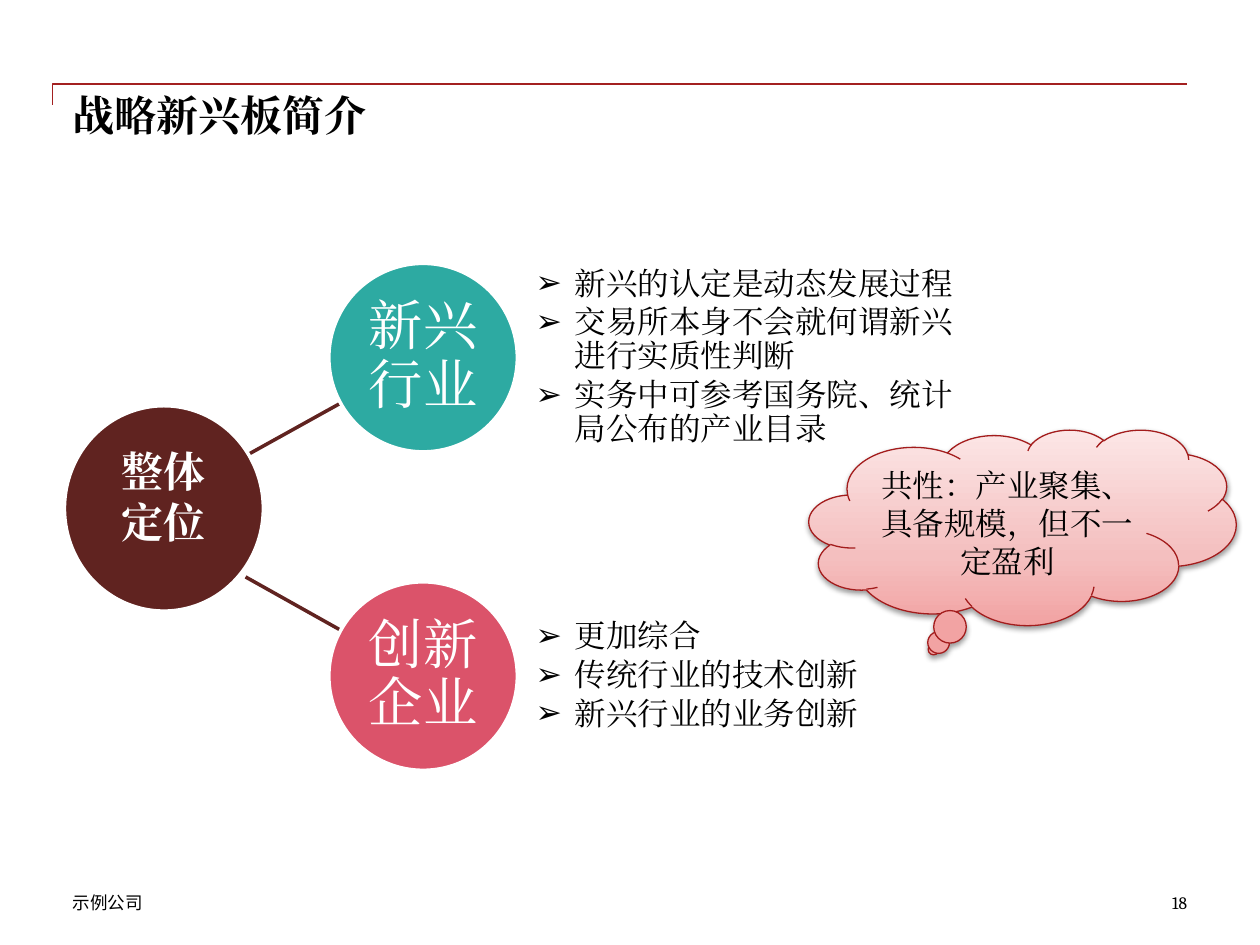
from copy import deepcopy

from lxml.etree import SubElement
from pptx import Presentation
from pptx.dml.color import RGBColor
from pptx.enum.shapes import MSO_CONNECTOR as Connector
from pptx.enum.shapes import MSO_SHAPE as Shape
from pptx.enum.text import MSO_ANCHOR as Anchor
from pptx.enum.text import MSO_AUTO_SIZE as AutoSize
from pptx.enum.text import PP_ALIGN as Align
from pptx.oxml.ns import qn
from pptx.util import Cm, Pt

BLACK = RGBColor(0x00, 0x00, 0x00)
WHITE = RGBColor(0xFF, 0xFF, 0xFF)
RULE_RED = RGBColor(0xA3, 0x20, 0x20)
MAROON = RGBColor(0x60, 0x23, 0x20)
TEAL = RGBColor(0x2D, 0xAA, 0xA2)
ROSE = RGBColor(0xDB, 0x53, 0x6A)
CLOUD_LINE = RGBColor(0xA3, 0x1C, 0x1C)
CLOUD_STOPS = [
    (0, RGBColor(0xF2, 0xA3, 0xA3)),
    (0.35, RGBColor(0xF4, 0xBF, 0xBF)),
    (1, RGBColor(0xFC, 0xE6, 0xE6)),
]
HEADING_FONT = "Cambria"
FOOTER_FONT = "Noto Sans CJK SC"

BRANCHES = [
    ("新兴行业", TEAL, 5.31, [
        "新兴的认定是动态发展过程",
        "交易所本身不会就何谓新兴进行实质性判断",
        "实务中可参考国务院、统计局公布的产业目录",
    ]),
    ("创新企业", ROSE, 11.73, [
        "更加综合",
        "传统行业的技术创新",
        "新兴行业的业务创新",
    ]),
]


def add_text(paragraph, text, size, color=BLACK, bold=False, name=HEADING_FONT):
    run = paragraph.add_run()
    run.text = text
    font = run.font
    font.size = Pt(size)
    font.bold = bold
    font.color.rgb = color
    font.name = name
    SubElement(run.font._element, qn("a:ea"), typeface=name)


def set_frame(shape, anchor, inset=0):
    frame = shape.text_frame
    frame.word_wrap = True
    frame.auto_size = AutoSize.NONE
    frame.vertical_anchor = anchor
    frame.margin_left = frame.margin_right = Cm(inset)
    frame.margin_top = frame.margin_bottom = Cm(inset)
    return frame


def place(shape, left, top, width, height):
    shape.left, shape.top = Cm(left), Cm(top)
    shape.width, shape.height = Cm(width), Cm(height)


def add_header(slide, left, top, width):
    builder = slide.shapes.build_freeform(Cm(left), Cm(top + 0.42))
    builder.add_line_segments(
        [(Cm(left), Cm(top)), (Cm(left + width), Cm(top))], close=False)
    rule = builder.convert_to_shape()
    rule.shadow.inherit = False
    rule.fill.background()
    rule.line.color.rgb = RULE_RED
    rule.line.width = Pt(1)

    title = slide.shapes.title
    place(title, left + 0.41, top + 0.22, width - 0.43, 2.97)
    paragraph = set_frame(title, Anchor.TOP).paragraphs[0]
    paragraph.alignment = Align.LEFT
    paragraph.line_spacing = 0.9
    add_text(paragraph, "战略新兴板简介", 24, bold=True)


def add_link(slide, start_x, start_y, end_x, end_y):
    link = slide.shapes.add_connector(
        Connector.STRAIGHT, Cm(start_x), Cm(start_y), Cm(end_x), Cm(end_y))
    link.line.color.rgb = MAROON
    link.line.width = Pt(2)
    SubElement(link._element.spPr, qn("a:effectLst"))


def add_disc(slide, left, top, width, height, color):
    disc = slide.shapes.add_shape(
        Shape.OVAL, Cm(left), Cm(top), Cm(width), Cm(height))
    disc.shadow.inherit = False
    disc.fill.solid()
    disc.fill.fore_color.rgb = color
    disc.line.color.rgb = WHITE
    disc.line.width = Pt(2)
    return disc


def add_root(slide, left, top, width, height):
    disc = add_disc(slide, left, top, width, height, MAROON)
    paragraph = set_frame(disc, Anchor.TOP, 0.2).paragraphs[0]
    paragraph.alignment = Align.CENTER
    add_text(paragraph, "整体定位", 24, WHITE, bold=True)


def add_bullet(paragraph):
    properties = paragraph._p.get_or_add_pPr()
    properties.set("marL", str(Cm(0.79)))
    properties.set("indent", str(-Cm(0.79)))
    SubElement(properties, qn("a:buFont"), typeface="Arial")
    SubElement(properties, qn("a:buChar"), char="➢")


def add_branch(slide, body, left, top, size, label, color, items):
    disc = add_disc(slide, left, top, size, size, color)
    paragraph = set_frame(disc, Anchor.MIDDLE, 0.05).paragraphs[0]
    paragraph.alignment = Align.CENTER
    paragraph.line_spacing = 0.9
    paragraph.space_after = Pt(10.85)
    add_text(paragraph, label, 31, WHITE)

    place(body, left + size + 0.37, top, 8.71, size)
    frame = set_frame(body, Anchor.MIDDLE)
    for index, item in enumerate(items):
        paragraph = frame.add_paragraph() if index else frame.paragraphs[0]
        add_bullet(paragraph)
        paragraph.line_spacing = 0.9
        paragraph.space_before = Pt(0)
        paragraph.space_after = Pt(2.7)
        add_text(paragraph, item, 18)


def add_cloud(slide, left, top, width, height):
    cloud = slide.shapes.add_shape(
        Shape.CLOUD_CALLOUT, Cm(left), Cm(top), Cm(width), Cm(height))
    cloud.fill.gradient()
    cloud.fill.gradient_angle = 90
    stop_list = cloud._element.spPr.find(".//" + qn("a:gsLst"))
    stop_list.insert(1, deepcopy(stop_list[0]))
    for stop, (position, color) in zip(cloud.fill.gradient_stops, CLOUD_STOPS):
        stop.position = position
        stop.color.rgb = color
    cloud.line.color.rgb = CLOUD_LINE
    cloud.line.width = Pt(0.75)

    cloud.shadow.inherit = False
    effects = cloud._element.spPr.find(qn("a:effectLst"))
    shadow = SubElement(effects, qn("a:outerShdw"), blurRad=str(Pt(3.1)),
                        dist=str(Pt(1.6)), dir="5400000", rotWithShape="0")
    shadow_color = SubElement(shadow, qn("a:srgbClr"), val=str(BLACK))
    SubElement(shadow_color, qn("a:alpha"), val="38000")

    paragraph = set_frame(cloud, Anchor.MIDDLE, 0.2).paragraphs[0]
    paragraph.alignment = Align.CENTER
    add_text(paragraph, "共性：产业聚集、具备规模，但不一定盈利", 18)


def add_footer(slide, left, top, width):
    parts = [
        ("示例公司", left, 7.19, Align.LEFT, FOOTER_FONT),
        ("18", left + width - 4.24, 4.24, Align.RIGHT, HEADING_FONT),
    ]
    for text, part_left, part_width, alignment, name in parts:
        box = slide.shapes.add_textbox(
            Cm(part_left), Cm(top), Cm(part_width), Cm(0.43))
        paragraph = set_frame(box, Anchor.TOP).paragraphs[0]
        paragraph.alignment = alignment
        add_text(paragraph, text, 10, name=name)


def main():
    presentation = Presentation()
    presentation.slide_width, presentation.slide_height = Cm(25.4), Cm(19.05)
    slide = presentation.slides.add_slide(presentation.slide_layouts[3])
    bodies = [slide.placeholders[1], slide.placeholders[2]]

    add_header(slide, 1.06, 1.69, 22.86)
    add_link(slide, 4.95, 9.19, 6.86, 8.13)
    add_link(slide, 4.95, 11.63, 6.86, 12.7)
    add_root(slide, 1.3, 8.18, 4.01, 4.14)
    for body, (label, color, top, items) in zip(bodies, BRANCHES):
        add_branch(slide, body, 6.63, top, 3.8, label, color, items)
    add_cloud(slide, 16.31, 8.66, 8.61, 3.94)
    add_footer(slide, 1.47, 17.98, 22.46)
    presentation.save("out.pptx")


if __name__ == "__main__":
    main()
